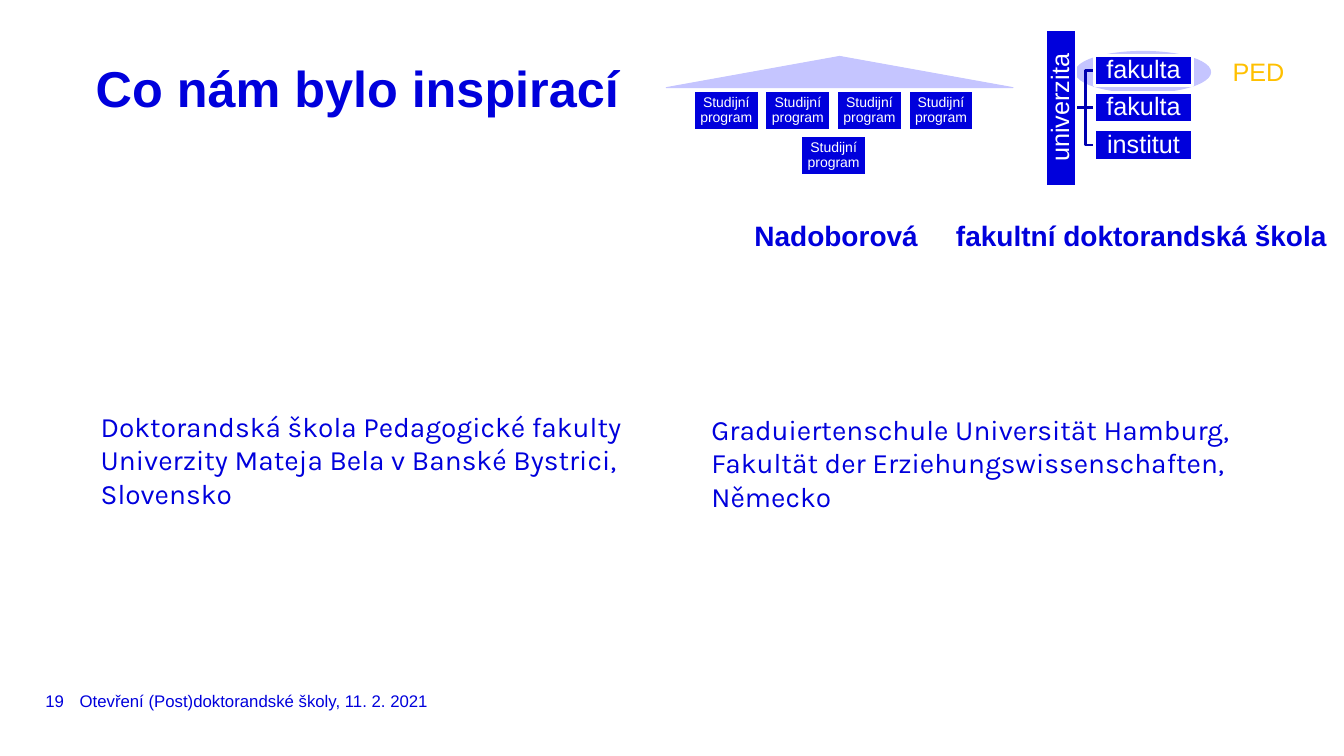
from dataclasses import dataclass
from typing import Optional

from lxml.etree import SubElement
from pptx import Presentation
from pptx.dml.color import RGBColor as Color
from pptx.enum.shapes import MSO_CONNECTOR as Link, MSO_SHAPE as Preset
from pptx.enum.text import MSO_ANCHOR as Anchor, PP_ALIGN as Align
from pptx.oxml.ns import qn
from pptx.util import Emu, Inches, Pt

# Grid: 160 columns by 90 rows of square cells
COLUMNS, ROWS = 160, 90
CELL = Inches(1) / 12


@dataclass(frozen=True)
class Theme:
    blue: str = "0000DC"
    line_blue: str = "0000B0"
    pale: str = "C5C5FF"
    white: str = "FFFFFF"
    gold: str = "FFC000"
    font: str = "Arial"
    body_font: str = "Karla"
    title: float = 36
    body: float = 20
    label: float = 18
    footer: float = 12
    small: float = 10
    border: float = 2
    thin: float = 0.75


THEME = Theme()


@dataclass(frozen=True)
class Area:
    left: float
    top: float
    width: float
    height: float


@dataclass(frozen=True)
class TextStyle:
    size: float
    color: str = THEME.blue
    font: str = THEME.font
    bold: bool = False
    align: Align = Align.LEFT
    anchor: Anchor = Anchor.TOP
    spacing: Optional[float | Pt] = None
    inset: tuple[float, float] = (0, 0)
    indent: float = 0
    wrap: bool = True


@dataclass(frozen=True)
class Label:
    text: str
    area: Area
    style: TextStyle


def cells(count: float) -> Emu:
    return Emu(round(count * CELL))


def place(area: Area) -> tuple[Emu, Emu, Emu, Emu]:
    return cells(area.left), cells(area.top), cells(area.width), cells(area.height)


def write(shape, text: str, style: TextStyle) -> None:
    frame = shape.text_frame
    frame.word_wrap = style.wrap
    frame.vertical_anchor = style.anchor
    frame.margin_left = frame.margin_right = cells(style.inset[0])
    frame.margin_top = frame.margin_bottom = cells(style.inset[1])
    para = frame.paragraphs[0]
    para.alignment = style.align
    if style.spacing is not None:
        para.line_spacing = style.spacing
    if style.indent:
        para._p.get_or_add_pPr().set("marL", str(cells(style.indent)))
    span = para.add_run()
    span.text = text
    span.font.name = style.font
    span.font.size = Pt(style.size)
    span.font.bold = style.bold
    span.font.color.rgb = Color.from_string(style.color)


def add_label(page, label: Label) -> None:
    write(page.shapes.add_textbox(*place(label.area)), label.text, label.style)


def stroke(shape, color: str, width: float) -> None:
    shape.line.color.rgb = Color.from_string(color)
    shape.line.width = Pt(width)


def add_figure(page, preset: Preset, area: Area, fill: str, line: str, width: float):
    shape = page.shapes.add_shape(preset, *place(area))
    shape.shadow.inherit = False
    shape.fill.solid()
    shape.fill.fore_color.rgb = Color.from_string(fill)
    stroke(shape, line, width)
    return shape


def add_box(page, label: Label):
    box = add_figure(page, Preset.RECTANGLE, label.area, THEME.blue, THEME.white, THEME.border)
    write(box, label.text, label.style)
    return box


def add_elbow(page, points: list[tuple[float, float]]) -> None:
    corners = [(cells(x), cells(y)) for x, y in points]
    builder = page.shapes.build_freeform(*corners[0])
    builder.add_line_segments(corners[1:], close=False)
    elbow = builder.convert_to_shape()
    elbow.shadow.inherit = False
    elbow.fill.background()
    stroke(elbow, THEME.line_blue, THEME.border)


FOOTER = TextStyle(THEME.footer, anchor=Anchor.MIDDLE)
NUMBER = TextStyle(THEME.footer, anchor=Anchor.MIDDLE, wrap=False)
TITLE = TextStyle(THEME.title, bold=True, spacing=Pt(40))
TAGLINE = TextStyle(THEME.body, bold=True, spacing=Pt(36), indent=1)
BODY = TextStyle(THEME.body, font=THEME.body_font, inset=(1.2, 0.6))
PED = TextStyle(THEME.label, THEME.gold, inset=(1.2, 0.6))
PROGRAM = TextStyle(THEME.small, THEME.white, align=Align.CENTER, anchor=Anchor.MIDDLE,
                    spacing=0.9, inset=(0.48, 0.48))
UNIT = TextStyle(THEME.label, THEME.white, align=Align.CENTER, anchor=Anchor.MIDDLE,
                 spacing=0.9, inset=(0.12, 0.12))

LABELS = [
    Label("Otevření (Post)doktorandské školy, 11. 2. 2021", Area(9.48, 81.72, 103.92, 3.36), FOOTER),
    Label("19", Area(5.4, 81.72, 3.36, 3.36), NUMBER),
    Label("Nadoborová \tfakultní doktorandská škola", Area(88.8, 24, 69.84, 7.2), TAGLINE),
    Label("PED", Area(145.56, 6.12, 12.48, 4.8), PED),
    Label("Co nám bylo inspirací", Area(11.4, 7.32, 141.12, 5.88), TITLE),
    Label("Graduiertenschule Universität Hamburg, Fakultät der Erziehungswissenschaften, Německo",
          Area(83.52, 48.48, 67.68, 17.4), BODY),
    Label("Doktorandská škola Pedagogické fakulty Univerzity Mateja Bela v Banské Bystrici, Slovensko",
          Area(10.8, 48.12, 72.72, 13.32), BODY),
]


def draw_programs(page) -> None:
    # Four programmes in a row, the fifth centred below
    for step, row in [(0, 0), (1, 0), (2, 0), (3, 0), (1.5, 1)]:
        area = Area(82.56 + step * 8.52, 10.8 + row * 5.4, 7.8, 4.68)
        add_box(page, Label("Studijní program", area, PROGRAM))
    # Roof over the programmes
    roof = Area(79.32, 6.72, 41.28, 3.72)
    add_figure(page, Preset.ISOSCELES_TRIANGLE, roof, THEME.pale, THEME.pale, THEME.thin)


def draw_university(page) -> None:
    trunk, bend, edge, first, pitch = 128.1, 129.24, 130.32, 8.4, 4.44
    middle = first + pitch
    # Highlight behind the first faculty
    halo = add_figure(page, Preset.OVAL, Area(128.04, 6.12, 16.08, 4.92),
                      THEME.pale, THEME.pale, THEME.thin)
    # Branches to the outer units
    for end in (middle + pitch, first):
        add_elbow(page, [(trunk, middle), (bend, middle), (bend, end), (edge, end)])
    # University bar, turned to read upwards
    bar = add_box(page, Label("univerzita", Area(117, middle - 1.8, 18.6, 3.6), UNIT))
    bar.rotation = 270
    # Units
    units = [add_box(page, Label(name, Area(edge, first - 1.8 + row * pitch, 11.64, 3.6), UNIT))
             for row, name in enumerate(("fakulta", "fakulta", "institut"))]
    # Straight branch, kept under the boxes; the bar's bottom side faces right
    branch = page.shapes.add_connector(Link.STRAIGHT, cells(trunk), cells(middle),
                                       cells(edge), cells(middle))
    branch.begin_connect(bar, 2)
    branch.end_connect(units[1], 1)
    branch.begin_x, branch.begin_y = cells(trunk), cells(middle)
    stroke(branch, THEME.line_blue, THEME.border)
    SubElement(branch.element.spPr, qn("a:effectLst"))
    halo.element.addnext(branch.element)


def main() -> None:
    deck = Presentation()
    deck.slide_width, deck.slide_height = cells(COLUMNS), cells(ROWS)
    page = deck.slides.add_slide(deck.slide_layouts[6])
    draw_programs(page)
    draw_university(page)
    for label in LABELS:
        add_label(page, label)
    deck.save("out.pptx")


if __name__ == "__main__":
    main()
